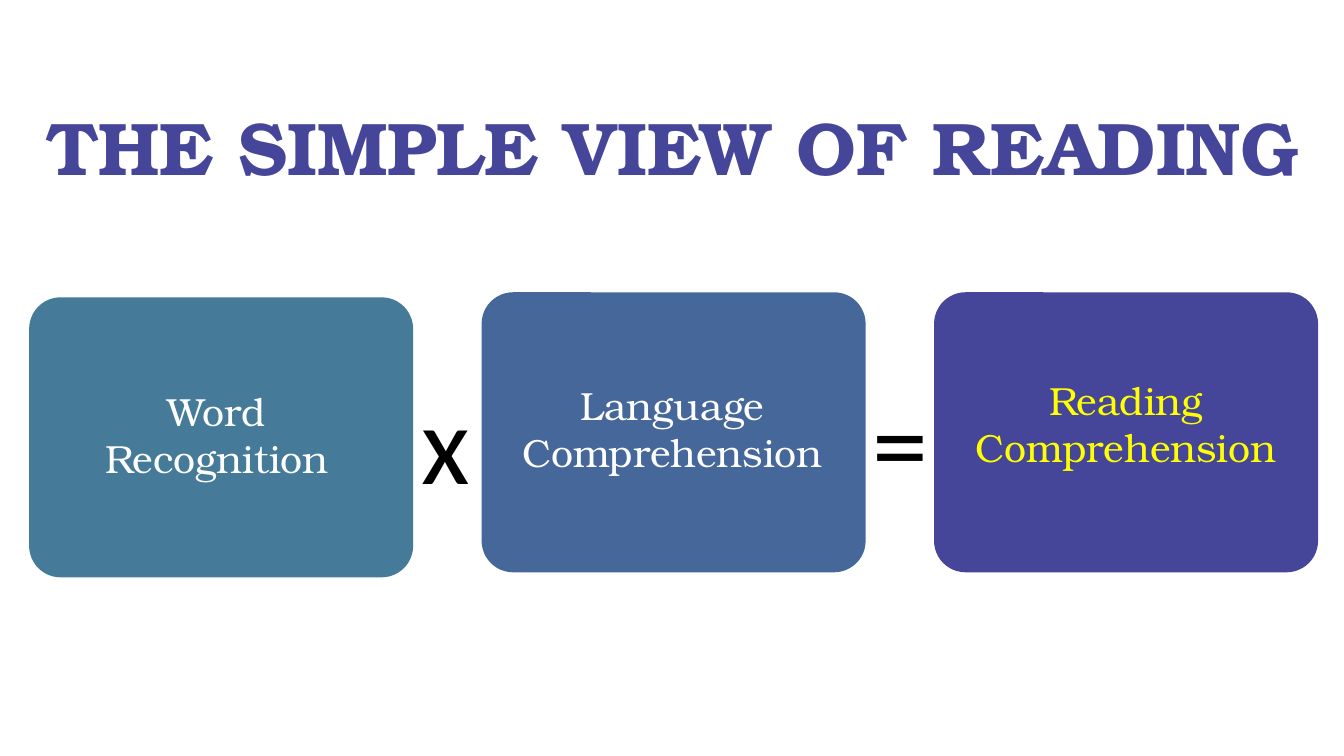
from pptx import Presentation
from pptx import util as u
from pptx.dml.color import RGBColor
from pptx.enum import shapes, text

SERIF, SANS = "TeX Gyre Bonum", "Calibri"
TITLE = "THE SIMPLE VIEW OF READING"
# lines, fill, text colour, card top, text left, text top, text width
CARDS = [
    (["Word Recognition"], "457B99", "FFFFFF", 212.4, 41.8, 272.9, 226),
    (["Language", "Comprehension"], "456799", "FFFFFF", 208.8, 359.3, 268.6, 242),
    (["Reading", "Comprehension"], "454699", "FFFF00", 208.8, 683.3, 265, 242),
]
# sign, left, width, left inset
OPERATORS = [("x", 281.5, 75.6, 19.3), ("=", 623.5, 49.7, 0)]
CARD_LEFT, CARD_PITCH, CARD_WIDTH, CARD_HEIGHT = 20.8, 323.2, 274.3, 200
CORNER_RADIUS = 22.5
TEXT_HEIGHT = 74.9
OPERATOR_TOP, OPERATOR_HEIGHT = 291.6, 74.2


def color(hex_string):
    return RGBColor.from_string(hex_string)


def box(left, top, width, height):
    return [u.Pt(value) for value in (left, top, width, height)]


def write(frame, lines, font, align, spacing=None, anchor=text.MSO_ANCHOR.TOP):
    """Fill a text frame with one formatted paragraph per line."""
    frame.word_wrap = True
    frame.auto_size = text.MSO_AUTO_SIZE.NONE
    frame.vertical_anchor = anchor
    for index, line in enumerate(lines):
        paragraph = frame.add_paragraph() if index else frame.paragraphs[0]
        paragraph.alignment = align
        if spacing:
            paragraph.line_spacing = u.Pt(spacing)
        run = paragraph.add_run()
        run.text = line
        for name, value in font.items():
            if name == "color":
                run.font.color.rgb = color(value)
            else:
                setattr(run.font, name, value)


def add_title(slide):
    title = slide.shapes.title
    title.left, title.top, title.width, title.height = box(0.4, 66.2, 959.6, 72)
    font = {"name": SERIF, "size": u.Pt(53.3), "bold": True, "color": "454699"}
    write(title.text_frame, [TITLE], font, text.PP_ALIGN.CENTER, 67.2,
          text.MSO_ANCHOR.MIDDLE)


def add_operators(slide):
    font = {"name": SANS, "size": u.Pt(80), "color": "000000"}
    for sign, left, width, inset in OPERATORS:
        frame = slide.shapes.add_textbox(
            *box(left, OPERATOR_TOP, width, OPERATOR_HEIGHT)).text_frame
        for side in ("top", "right", "bottom"):
            setattr(frame, f"margin_{side}", 0)
        frame.margin_left = u.Pt(inset)
        write(frame, [sign], font, text.PP_ALIGN.LEFT, 70.4)


def add_cards(slide):
    for index, card in enumerate(CARDS):
        lines, fill, text_color, top, text_left, text_top, text_width = card
        left = CARD_LEFT + index * CARD_PITCH
        shape = slide.shapes.add_shape(
            shapes.MSO_SHAPE.ROUNDED_RECTANGLE,
            *box(left, top, CARD_WIDTH, CARD_HEIGHT))
        shape.adjustments[0] = CORNER_RADIUS / CARD_HEIGHT
        shape.shadow.inherit = False
        shape.fill.solid()
        shape.fill.fore_color.rgb = color(fill)
        shape.line.fill.background()
        label = slide.shapes.add_textbox(
            *box(text_left, text_top, text_width, TEXT_HEIGHT))
        font = {"name": SERIF, "size": u.Pt(28), "color": text_color}
        write(label.text_frame, lines, font, text.PP_ALIGN.CENTER)


def main():
    presentation = Presentation()
    presentation.slide_width, presentation.slide_height = u.Pt(960), u.Pt(540)
    slide = presentation.slides.add_slide(presentation.slide_layouts[5])
    add_title(slide)
    add_operators(slide)
    add_cards(slide)
    presentation.save("out.pptx")


if __name__ == "__main__":
    main()
